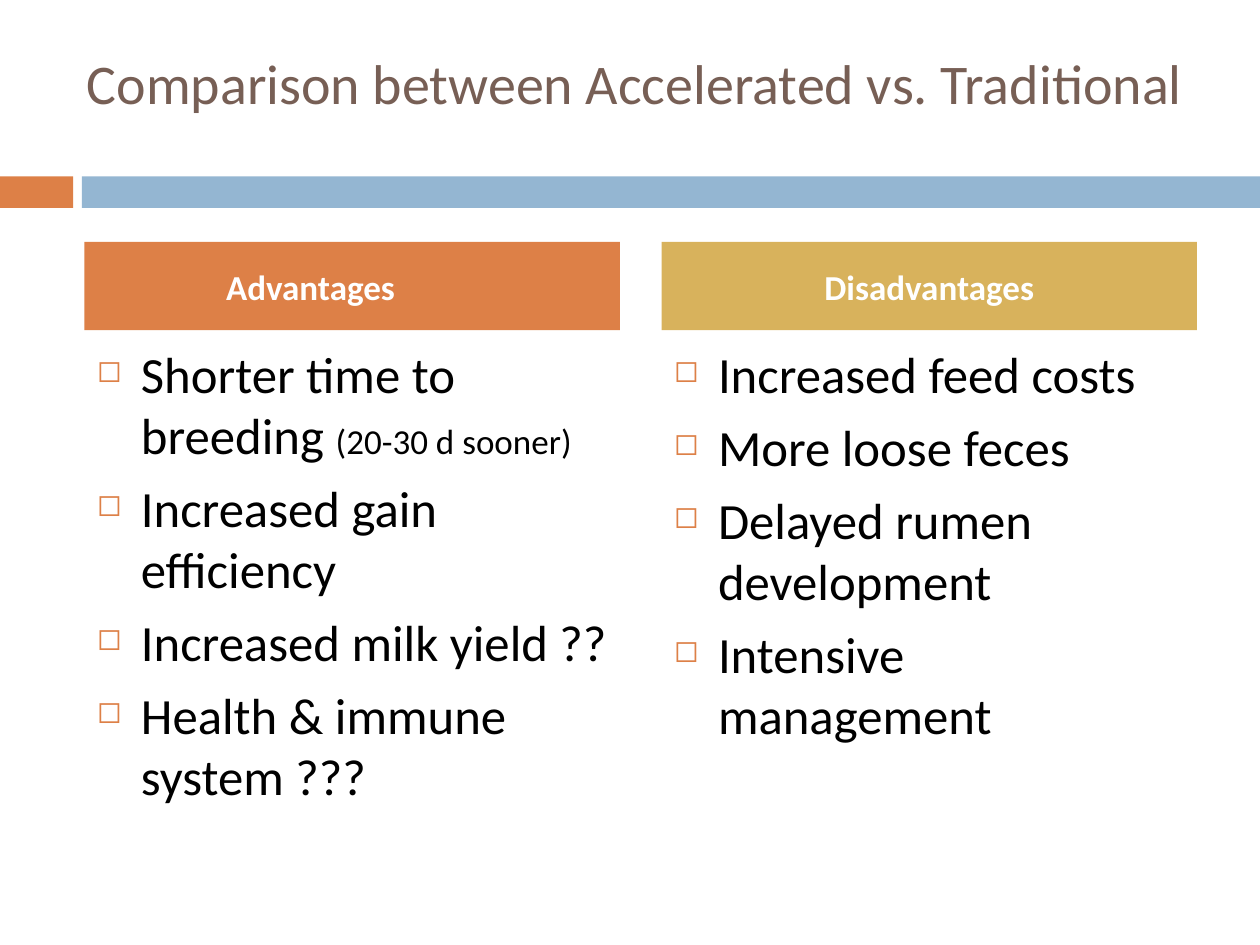
import pptx
import pptx.dml.color
import pptx.enum.shapes
import pptx.enum.text
import pptx.oxml
import pptx.oxml.ns
import pptx.util

Inches, Pt = pptx.util.Inches, pptx.util.Pt
ALIGN, ANCHOR = pptx.enum.text.PP_ALIGN, pptx.enum.text.MSO_ANCHOR

THEME = {
    "font": "Calibri",
    "brown": "775F55", "orange": "DD8047", "blue": "94B6D2",
    "gold": "D8B25C", "black": "000000", "white": "FFFFFF",
    "title": 32, "body": 29, "small": 20,
}

TITLE = "Comparison between Accelerated vs. Traditional"
# Each item is a list of (text, size) runs; right_inset shifts the heading left.
COLUMNS = [
    {"heading": "Advantages", "fill": "orange", "right_inset": 0.76, "items": [
        [("Shorter time to breeding ", "body"), ("(20-30 d sooner)", "small")],
        [("Increased gain efficiency", "body")],
        [("Increased milk yield ??", "body")],
        [("Health & immune system ???", "body")],
    ]},
    {"heading": "Disadvantages", "fill": "gold", "right_inset": 0.1, "items": [
        [("Increased feed costs", "body")],
        [("More loose feces", "body")],
        [("Delayed rumen development", "body")],
        [("Intensive management", "body")],
    ]},
]

LEFT, COL_W, GAP = 0.67, 4.25, 0.33
BAND_TOP, BAND_H = 1.4, 0.25
BANDS = [(0, 0.58, "orange"), (0.65, 9.35, "blue")]
HEAD_TOP, HEAD_H = 1.92, 0.7
BODY_TOP, BODY_H = 2.67, 3.92
INDENT, SPACE_BEFORE = 0.35, 7


def color(name):
    return pptx.dml.color.RGBColor.from_string(THEME[name])


def add_rect(s, x, y, w, h, fill):
    sp = s.shapes.add_shape(pptx.enum.shapes.MSO_SHAPE.RECTANGLE,
                            Inches(x), Inches(y), Inches(w), Inches(h))
    sp.shadow.inherit = False
    sp.fill.solid()
    sp.fill.fore_color.rgb = color(fill)
    sp.line.fill.background()
    return sp


def add_box(s, x, y, w, h):
    return s.shapes.add_textbox(Inches(x), Inches(y), Inches(w), Inches(h))


def add_bullet(p):
    pPr = p._p.get_or_add_pPr()
    pPr.set("marL", str(Inches(INDENT)))
    pPr.set("indent", str(-Inches(INDENT)))
    ns = pptx.oxml.ns.nsdecls("a")
    for xml in (
        f'<a:buClr {ns}><a:srgbClr val="{THEME["orange"]}"/></a:buClr>',
        f'<a:buSzPct {ns} val="60000"/>',
        f'<a:buChar {ns} char="◻"/>',
    ):
        pPr.append(pptx.oxml.parse_xml(xml))


def write(sp, paragraphs, fill="black", bold=False, align=ALIGN.LEFT,
          anchor=ANCHOR.TOP, bullets=False, right_inset=0.1):
    """Fill a shape with paragraphs, each a list of (text, size name) runs."""
    tf = sp.text_frame
    tf.word_wrap = True
    tf.vertical_anchor = anchor
    tf.margin_right = Inches(right_inset)
    for i, runs in enumerate(paragraphs):
        p = tf.add_paragraph() if i else tf.paragraphs[0]
        p.alignment = align
        if i:
            p.space_before = Pt(SPACE_BEFORE)
        if bullets:
            add_bullet(p)
        for text, size in runs:
            r = p.add_run()
            r.text = text
            r.font.name = THEME["font"]
            r.font.size = Pt(THEME[size])
            r.font.bold = bold
            r.font.color.rgb = color(fill)


def main():
    prs = pptx.Presentation()
    prs.slide_width, prs.slide_height = Inches(10), Inches(7.5)
    s = prs.slides.add_slide(prs.slide_layouts[6])

    for x, w, fill in BANDS:
        add_rect(s, x, BAND_TOP, w, BAND_H, fill)
    write(add_box(s, 0.58, 0.3, 8.92, 0.7), [[(TITLE, "title")]],
          fill="brown", align=ALIGN.CENTER, anchor=ANCHOR.MIDDLE)

    for i, col in enumerate(COLUMNS):
        x = LEFT + i * (COL_W + GAP)
        write(add_box(s, x, BODY_TOP, COL_W, BODY_H), col["items"], bullets=True)
        write(add_rect(s, x, HEAD_TOP, COL_W, HEAD_H, col["fill"]),
              [[(col["heading"], "small")]], fill="white", bold=True,
              align=ALIGN.CENTER, anchor=ANCHOR.MIDDLE,
              right_inset=col["right_inset"])

    prs.save("out.pptx")


if __name__ == "__main__":
    main()
